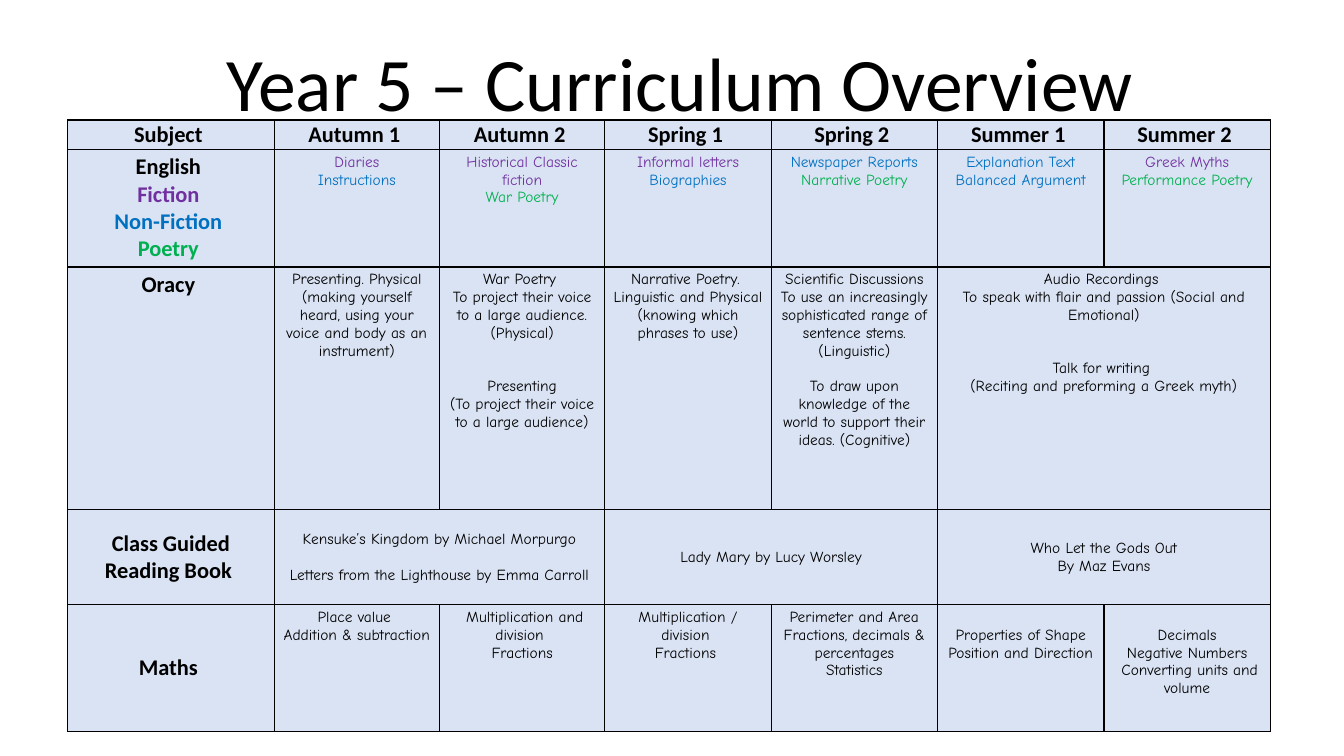
import pptx
import pptx.util
import pptx.dml.color
import pptx.enum.text
import lxml.etree
from dataclasses import dataclass

Inches = pptx.util.Inches
Pt = pptx.util.Pt
Align = pptx.enum.text.PP_ALIGN
Anchor = pptx.enum.text.MSO_ANCHOR


@dataclass(frozen=True)
class Theme:
    ink: str = "000000"
    fill: str = "DAE3F3"
    story: str = "7030A0"
    fact: str = "0070C0"
    poem: str = "00B050"
    head: str = "Calibri"
    body: str = "Comic Neue"
    title: int = 54
    label: int = 16
    note: int = 11
    line: float = 12.65
    rule: int = 1


theme = Theme()


@dataclass(frozen=True)
class Para:
    text: str
    tone: str = theme.ink
    gap: int = 0


def story(text):
    return Para(text, theme.story)


def fact(text):
    return Para(text, theme.fact)


def poem(text):
    return Para(text, theme.poem)


WIDTHS = [2.05] + [1.64] * 2 + [1.65] * 4
HEIGHTS = [0.28, 1.09, 2.41, 0.94, 1.26]
TERMS = ["Autumn 1 ", "Autumn 2 ", "Spring 1 ", "Spring 2 ", "Summer 1 ", "Summer 2 "]

LABELS = [
    ["Subject "],
    ["English ", story("Fiction "), fact("Non-Fiction "), poem("Poetry ")],
    ["Oracy "],
    ["Class Guided Reading Book "],
    ["Maths "],
]

ENGLISH = [
    [story("Diaries"), fact("Instructions")],
    [story("Historical Classic fiction"), poem("War Poetry")],
    [story("Informal letters"), fact("Biographies")],
    [fact("Newspaper Reports"), poem("Narrative Poetry")],
    [fact("Explanation Text"), fact("Balanced Argument")],
    [story("Greek Myths"), poem("Performance Poetry")],
]

ORACY = [
    ["Presenting. Physical (making yourself heard, using your voice and body as an instrument)"],
    ["War Poetry ",
     "To project their voice to a large audience. (Physical)",
     Para("Presenting", gap=2),
     "(To project their voice to a large audience)"],
    ["Narrative Poetry. ", "Linguistic and Physical", "(knowing which phrases to use)"],
    ["Scientific Discussions",
     "To use an increasingly sophisticated range of sentence stems. (Linguistic)",
     Para("To draw upon knowledge of the world to support their ideas. (Cognitive)", gap=1)],
    ["Audio Recordings ",
     "To speak with flair and passion (Social and Emotional)",
     Para("Talk for writing ", gap=2),
     "(Reciting and preforming a Greek myth)"],
]

BOOKS = [
    ["Kensuke’s Kingdom by Michael Morpurgo",
     Para("Letters from the Lighthouse by Emma Carroll", gap=1)],
    ["Lady Mary by Lucy Worsley"],
    ["Who Let the Gods Out", "By Maz Evans"],
]

MATHS = [
    ["Place value ", "Addition & subtraction"],
    [" Multiplication and division ", "Fractions"],
    ["Multiplication / division ", "Fractions "],
    ["Perimeter and Area", "Fractions, decimals & percentages", "Statistics"],
    [Para("Properties of Shape", gap=1), "Position and Direction"],
    [Para("Decimals", gap=1), "Negative Numbers", " Converting units and volume"],
]


def add_run(para, text, font, size, tone, bold=False):
    run = para.add_run()
    run.text = text
    run.font.name = font
    run.font.size = Pt(size)
    run.font.bold = bold
    run.font.color.rgb = pptx.dml.color.RGBColor.from_string(tone)


def add_edges(cell):
    props = cell._tc.get_or_add_tcPr()
    space = "{http://schemas.openxmlformats.org/drawingml/2006/main}"
    for spot, side in enumerate(("lnL", "lnR", "lnT", "lnB")):
        edge = lxml.etree.Element(space + side, w=str(Pt(theme.rule)))
        fill = lxml.etree.SubElement(edge, space + "solidFill")
        lxml.etree.SubElement(fill, space + "srgbClr", val=theme.ink)
        props.insert(spot, edge)


def style_cell(cell, side, top):
    cell.margin_left = cell.margin_right = Inches(side)
    cell.margin_top = cell.margin_bottom = Inches(top)
    cell.fill.solid()
    cell.fill.fore_color.rgb = pptx.dml.color.RGBColor.from_string(theme.fill)
    add_edges(cell)


def fill_cell(cell, items, label, middle):
    cell.vertical_anchor = Anchor.MIDDLE if middle else Anchor.TOP
    font = theme.head if label else theme.body
    size = theme.label if label else theme.note
    frame = cell.text_frame
    for spot, item in enumerate(items):
        part = Para(item) if isinstance(item, str) else item
        para = frame.add_paragraph() if spot else frame.paragraphs[0]
        para.alignment = Align.CENTER
        if part.gap and spot:
            para.space_before = Pt(part.gap * theme.line)
        elif part.gap:
            cell.margin_top += Pt(part.gap * theme.line)
        add_run(para, part.text, font, size, part.tone, label)


def fill_row(table, row, cells, spans, label=False, middle=False):
    col = 1
    for items, span in zip(cells, spans):
        cell = table.cell(row, col)
        if span > 1:
            cell.merge(table.cell(row, col + span - 1))
        fill_cell(cell, items, label, middle)
        col += span


def add_grid(slide):
    frame = slide.shapes.add_table(
        len(HEIGHTS), len(WIDTHS), Inches(0.67), Inches(1.19),
        Inches(sum(WIDTHS)), Inches(sum(HEIGHTS)))
    table = frame.table
    table.first_row = table.horz_banding = False
    for col, width in zip(table.columns, WIDTHS):
        col.width = Inches(width)
    for spot, height in enumerate(HEIGHTS):
        table.rows[spot].height = Inches(height)
        side, top = (0.08, 0.04) if spot else (0.03, 0.01)
        for cell in table.rows[spot].cells:
            style_cell(cell, side, top)
        fill_cell(table.cell(spot, 0), LABELS[spot], True, spot != 2)
    fill_row(table, 0, [[term] for term in TERMS], [1] * 6, True, True)
    fill_row(table, 1, ENGLISH, [1] * 6)
    fill_row(table, 2, ORACY, [1] * 4 + [2])
    fill_row(table, 3, BOOKS, [2] * 3, middle=True)
    fill_row(table, 4, MATHS, [1] * 6)


def add_title(slide, text):
    title = slide.shapes.title
    title.left, title.top = Inches(2.15), Inches(0.3)
    title.width, title.height = Inches(11.18), Inches(1.02)
    frame = title.text_frame
    frame.word_wrap = True
    frame.auto_size = pptx.enum.text.MSO_AUTO_SIZE.NONE
    frame.vertical_anchor = Anchor.BOTTOM
    para = frame.paragraphs[0]
    para.alignment = Align.LEFT
    para.line_spacing = 0.9
    add_run(para, text, theme.head, theme.title, theme.ink)


def main():
    deck = pptx.Presentation()
    deck.slide_width, deck.slide_height = Inches(13.33), Inches(7.5)
    slide = deck.slides.add_slide(deck.slide_layouts[5])
    add_title(slide, "Year 5 – Curriculum Overview")
    add_grid(slide)
    deck.save("out.pptx")


if __name__ == "__main__":
    main()
